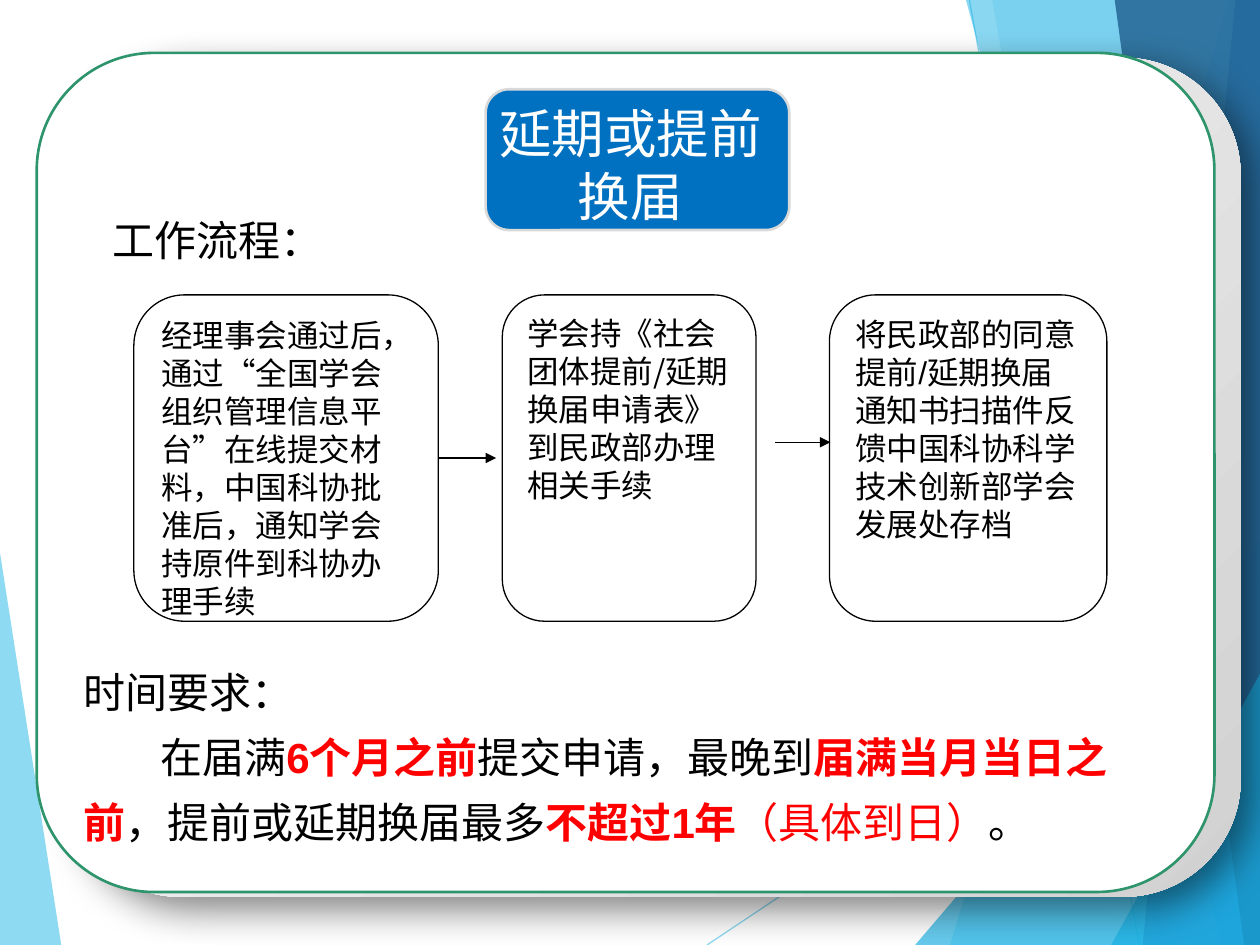
from pptx import Presentation
from pptx.dml.color import RGBColor
from pptx.enum.shapes import MSO_CONNECTOR, MSO_SHAPE
from pptx.enum.text import MSO_ANCHOR, PP_ALIGN
from pptx.oxml.ns import qn
from pptx.util import Pt
from lxml.etree import SubElement

COLORS = {
    "sky": "5FCBEF", "cyan": "17B0E4", "blue": "2E83C3", "navy": "226292",
    "green": "2E946B", "title": "0070C0", "title_edge": "D9D9D9", "grey": "D1D1D1",
    "white": "FFFFFF", "black": "000000", "red": "FF0000",
}
SC, JP = "Noto Sans CJK SC", "Noto Sans CJK JP"


def paint(target, color, opacity=100):
    """Give a fill or a line a solid colour, translucent if asked."""
    fill = getattr(target, "fill", target)
    fill.solid()
    fill.fore_color.rgb = RGBColor.from_string(COLORS[color])
    if opacity < 100:
        clr = fill._xPr.find(qn("a:solidFill"))[0]
        SubElement(clr, qn("a:alpha")).set("val", str(opacity * 1000))


def write(paragraph, runs, size, pitch, latin="Arial", east=SC):
    """Add (text, colour, bold) runs with a fixed line pitch."""
    paragraph.alignment = PP_ALIGN.LEFT
    paragraph.line_spacing = Pt(pitch)
    for text, color, bold in runs:
        run = paragraph.add_run()
        run.text = text
        run.font.size, run.font.bold, run.font.name = Pt(size), bold, latin
        paint(run.font, color)
        SubElement(run.font._element, qn("a:ea")).set("typeface", east)


prs = Presentation()
prs.slide_width, prs.slide_height = Pt(720), Pt(540)
slide = prs.slides.add_slide(prs.slide_layouts[6])
shapes = slide.shapes

# Background facets: corner points, colour, opacity
facets = [
    ([(0, 316), (35, 540), (0, 540)], "sky", 70),
    ([(702, 0), (543, 540), (720, 540), (720, 0)], "sky", 36),
    ([(567, 0), (662, 540), (720, 540), (720, 0)], "sky", 20),
    ([(523, 540), (720, 309), (720, 540)], "cyan", 66),
    ([(552, 0), (698, 540), (720, 540), (720, 0)], "cyan", 50),
    ([(706, 0), (653, 540), (720, 540), (720, 0)], "blue", 70),
    ([(637, 0), (711, 540), (720, 540), (720, 0)], "navy", 82),
    ([(635, 540), (720, 385), (720, 540)], "cyan", 66),
]
# Thin rays lie above the first facet
rays = [(404, 540, 720, 329), (554, 0, 651, 540)]
for index, (corners, color, opacity) in enumerate(facets):
    builder = shapes.build_freeform(*corners[0], scale=Pt(1))
    builder.add_line_segments(corners[1:], close=True)
    facet = builder.convert_to_shape()
    facet.shadow.inherit = False
    paint(facet, color, opacity)
    facet.line.fill.background()
    if index == 0:
        for ends in rays:
            ray = shapes.add_connector(MSO_CONNECTOR.STRAIGHT, *map(Pt, ends))
            ray.line.width = Pt(0.75)
            paint(ray.line, "sky", 70)
            SubElement(ray._element.spPr, qn("a:effectLst"))

# Grey backing card with a soft shadow
backing = shapes.add_shape(MSO_SHAPE.ROUNDED_RECTANGLE, Pt(36), Pt(33), Pt(673), Pt(479.5))
backing.adjustments[0] = 0.14
backing.line.fill.background()
backing.fill.gradient()
backing.fill.gradient_angle = 315
for stop, color in zip(backing.fill.gradient_stops, ("white", "grey")):
    stop.color.rgb = RGBColor.from_string(COLORS[color])
backing.shadow.inherit = False
shadow = SubElement(backing._element.spPr.find(qn("a:effectLst")), qn("a:outerShdw"))
for key, value in (("blurRad", Pt(23)), ("dist", Pt(10)), ("dir", 45 * 60000)):
    shadow.set(key, str(int(value)))
shadow_color = SubElement(shadow, qn("a:srgbClr"))
shadow_color.set("val", COLORS["black"])
SubElement(shadow_color, qn("a:alpha")).set("val", "50000")

# White card with the time requirement
card = shapes.add_shape(MSO_SHAPE.ROUNDED_RECTANGLE, Pt(21), Pt(30.25), Pt(673), Pt(479.5))
card.adjustments[0] = 0.14
card.shadow.inherit = False
paint(card, "white")
paint(card.line, "green")
card.line.width = Pt(1.5)
requirement = card.text_frame
requirement.word_wrap = True
requirement.vertical_anchor = MSO_ANCHOR.BOTTOM
requirement.margin_bottom, requirement.margin_right = Pt(6), Pt(20)
write(requirement.paragraphs[0], [("时间要求：", "black", False)], 24, 37.2)
deadline = requirement.add_paragraph()
write(deadline, [
    ("在届满", "black", False), ("6个月之前", "red", True),
    ("提交申请，最晚到", "black", False), ("届满当月当日之前", "red", True),
    ("，提前或延期换届最多", "black", False), ("不超过1年", "red", True),
    ("（具体到日）", "red", False), ("。", "black", False),
], 24, 37.2)
deadline._p.get_or_add_pPr().set("indent", str(Pt(44)))

# Title plate
plate = shapes.add_shape(MSO_SHAPE.ROUNDED_RECTANGLE, Pt(277.5), Pt(51), Pt(173.5), Pt(80.5))
plate.shadow.inherit = False
paint(plate, "title")
paint(plate.line, "title_edge")
plate.line.width = Pt(1.5)

# Title and process heading
headings = [
    ("延期或提前换届", (277.5, 55, 165.5, 78), 30, 35.5, "white", SC, PP_ALIGN.CENTER),
    ("工作流程：", (57, 119, 142, 36), 24, 28.8, "black", JP, PP_ALIGN.LEFT),
]
for text, place, size, pitch, color, font, align in headings:
    heading = shapes.add_textbox(*map(Pt, place)).text_frame
    heading.word_wrap = True
    write(heading.paragraphs[0], [(text, color, False)], size, pitch, font, font)
    heading.paragraphs[0].alignment = align

# Process steps: left, width, font, text
steps = [
    (76.5, 174, "Arial", SC, "经理事会通过后，通过“全国学会组织管理信息平台”在线提交材料，"
     "中国科协批准后，通知学会持原件到科协办理手续"),
    (287, 145, JP, JP, "学会持《社会团体提前/延期换届申请表》到民政部办理相关手续"),
    (474, 158.5, "Arial", SC, "将民政部的同意提前/延期换届通知书扫描件反馈"
     "中国科协科学技术创新部学会发展处存档"),
]
step_boxes = []
for left, width, latin, east, text in steps:
    step = shapes.add_shape(MSO_SHAPE.FLOWCHART_ALTERNATE_PROCESS,
                            Pt(left), Pt(168.5), Pt(width), Pt(186.5))
    step.shadow.inherit = False
    paint(step, "white")
    paint(step.line, "black")
    step.line.width = Pt(0.75)
    step.text_frame.word_wrap = True
    step.text_frame.vertical_anchor = MSO_ANCHOR.TOP
    write(step.text_frame.paragraphs[0], [(text, "black", False)], 18, 21.7, latin, east)
    step_boxes.append(step)

# Arrows between the steps
for start, end, y, source in ((250.5, 283.5, 261.75, step_boxes[0]), (443, 474.5, 252.75, None)):
    arrow = shapes.add_connector(MSO_CONNECTOR.STRAIGHT, Pt(start), Pt(y), Pt(end), Pt(y))
    if source is not None:
        arrow.begin_connect(source, 3)
    paint(arrow.line, "black")
    arrow.line.width = Pt(0.75)
    SubElement(arrow.line._get_or_add_ln(), qn("a:tailEnd")).set("type", "triangle")
    SubElement(arrow._element.spPr, qn("a:effectLst"))

prs.save("out.pptx")
